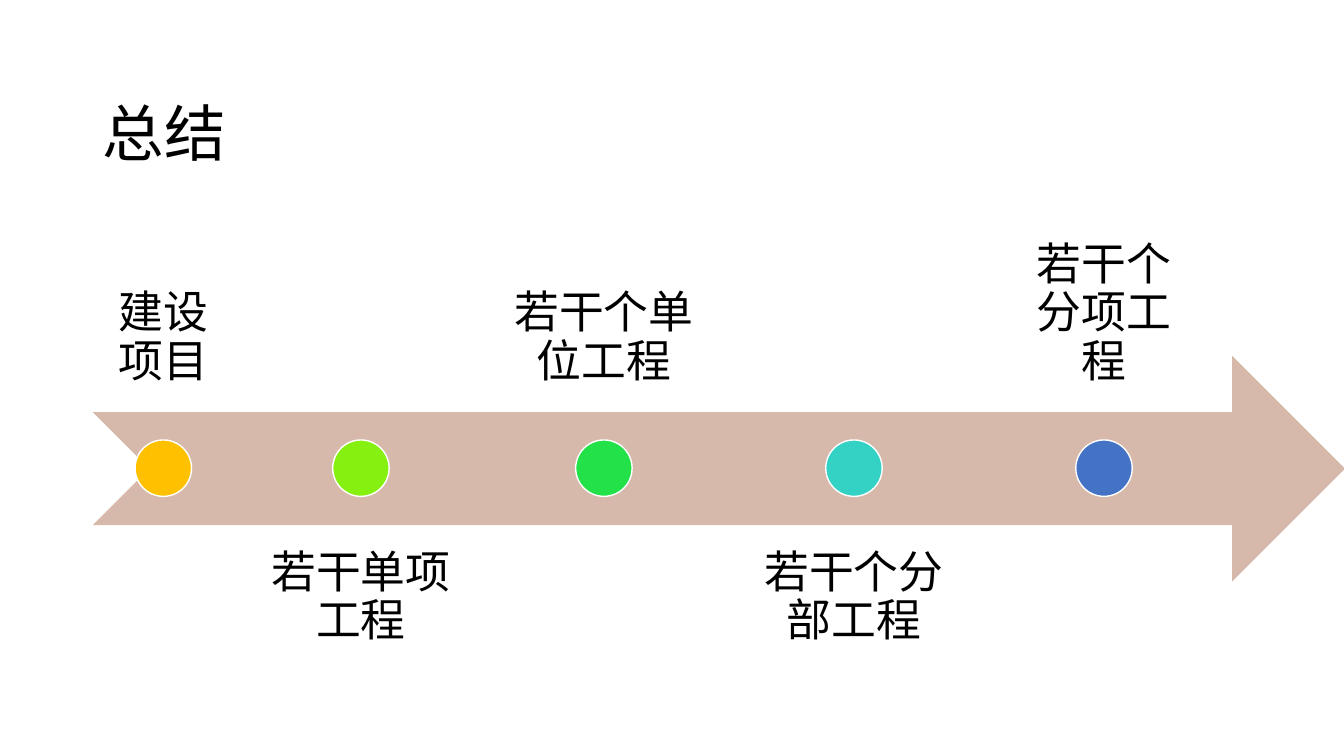
from lxml import etree
from pptx import Presentation
from pptx import util as u
from pptx.dml.color import RGBColor
from pptx.enum import shapes, text
from pptx.oxml.ns import qn

PX = 9144  # 100 px to the inch
SANS = "Noto Sans CJK SC"
DOT = 56
LABEL_HEIGHT = 224

# label, centre from the arrow's left end, label width, dot colour
STAGES = [
    ("建设项目", 70, 140, "FFC000"),
    ("若干单项工程", 266, 239, "86F011"),
    ("若干个单位工程", 507, 229, "23E148"),
    ("若干个分部工程", 755, 254, "33D2C5"),
    ("若干个分项工程", 1003, 226, "4472C4"),
]


def px(length):
    return u.Emu(round(length * PX))


def color(value):
    return RGBColor.from_string(value)


def add_shape(page, kind, box, fill, line=None):
    shape = page.shapes.add_shape(kind, *map(px, box))
    shape.shadow.inherit = False
    shape.fill.solid()
    shape.fill.fore_color.rgb = color(fill)
    if line:
        shape.line.color.rgb = color(line)
        shape.line.width = u.Pt(1)
    else:
        shape.line.fill.background()
    return shape


def add_text(page, box, words, size, font, spacing, anchor, align, insets):
    frame = page.shapes.add_textbox(*map(px, box)).text_frame
    frame.word_wrap = True
    frame.vertical_anchor = anchor
    frame.margin_left = frame.margin_right = px(insets[0])
    frame.margin_top = frame.margin_bottom = px(insets[1])
    para = frame.paragraphs[0]
    para.alignment = align
    para.line_spacing = spacing
    span = para.add_run()
    span.text = words
    span.font.size = u.Pt(size)
    span.font.name = font
    span.font.color.rgb = color("000000")
    east_asian = etree.SubElement(span.font._element, qn("a:ea"))
    east_asian.set("typeface", SANS)


def add_title(page, box):
    add_text(page, box, "总结", 44, "Times New Roman", 1.5,
             text.MSO_ANCHOR.MIDDLE, text.PP_ALIGN.LEFT, (10, 5))


def add_timeline(page, box):
    """Arrow with dots along its axis and labels alternating above and below."""
    left, top, width, height = box
    add_shape(page, shapes.MSO_SHAPE.NOTCHED_RIGHT_ARROW,
              (left, top + LABEL_HEIGHT * 3 / 4, width, LABEL_HEIGHT), "D7B9AB")
    for index, (words, offset, label_width, fill) in enumerate(STAGES):
        center = left + offset
        above = index % 2 == 0
        label_top = top if above else top + height - LABEL_HEIGHT
        anchor = text.MSO_ANCHOR.BOTTOM if above else text.MSO_ANCHOR.TOP
        add_text(page, (center - label_width / 2, label_top, label_width, LABEL_HEIGHT),
                 words, 32, SANS, 0.9, anchor, text.PP_ALIGN.CENTER, (25, 25))
        add_shape(page, shapes.MSO_SHAPE.OVAL,
                  (center - DOT / 2, top + (height - DOT) / 2, DOT, DOT), fill, "FFFFFF")


def main():
    deck = Presentation()
    deck.slide_width, deck.slide_height = u.Inches(13.33), u.Inches(7.5)
    page = deck.slides.add_slide(deck.slide_layouts[6])
    add_title(page, (92, 40, 1150, 145))
    add_timeline(page, (92, 185, 1242, 559))
    deck.save("out.pptx")


if __name__ == "__main__":
    main()
